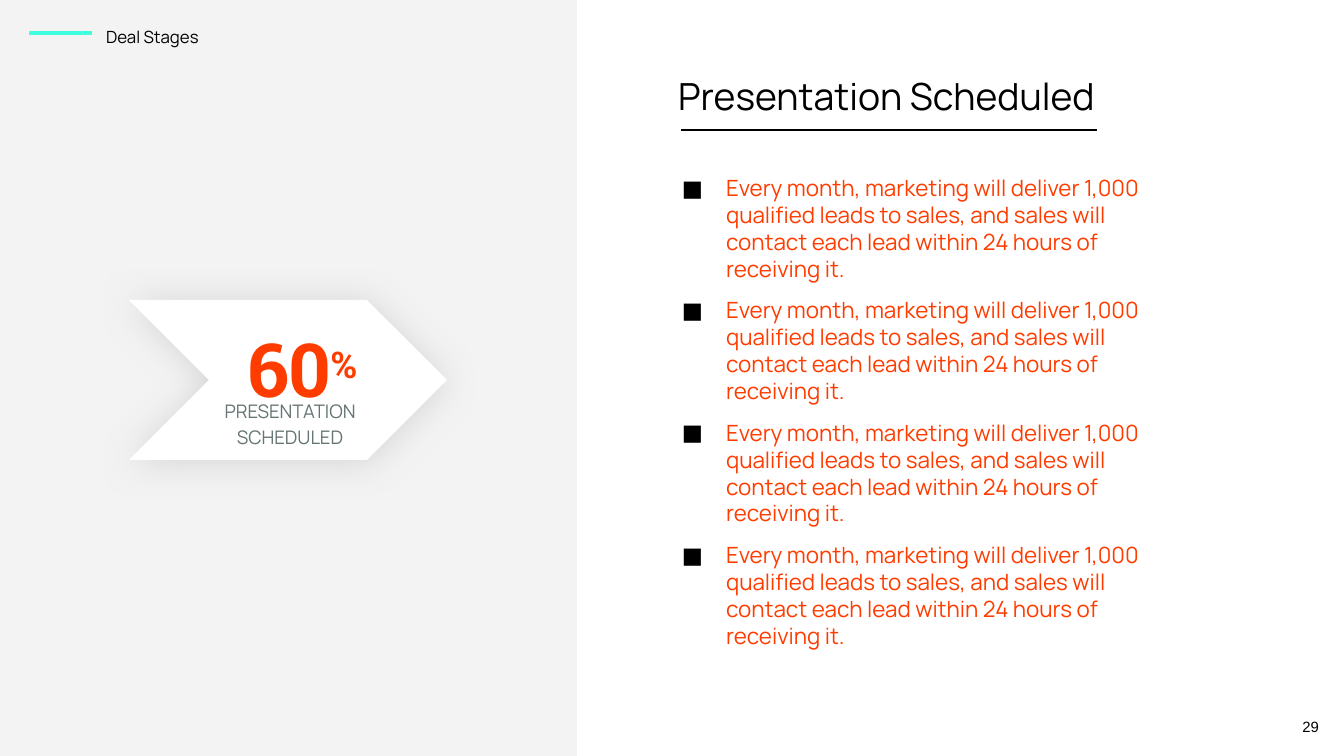
import lxml.etree
import pptx
import pptx.dml.color
import pptx.enum.shapes
import pptx.enum.text
import pptx.oxml
import pptx.oxml.ns
import pptx.util

RGB = pptx.dml.color.RGBColor
ALIGN = pptx.enum.text.PP_ALIGN
ANCHOR = pptx.enum.text.MSO_ANCHOR
SHAPE = pptx.enum.shapes.MSO_SHAPE
Pt = pptx.util.Pt
qn = pptx.oxml.ns.qn

BLACK = RGB(0x00, 0x00, 0x00)
WHITE = RGB(0xFF, 0xFF, 0xFF)
PANEL = RGB(0xF3, 0xF3, 0xF3)
MINT = RGB(0x3F, 0xFF, 0xDC)
ORANGE = RGB(0xFF, 0x3C, 0x00)
GRAY = RGB(0x65, 0x75, 0x73)
SHADOW = RGB(0xB7, 0xB7, 0xB7)

# Content
SECTION = "Deal Stages"
TITLE = "Presentation Scheduled"
POINTS = ["Every month, marketing will deliver 1,000 qualified leads to sales, "
          "and sales will contact each lead within 24 hours of receiving it."] * 4
PERCENT = ("60", "%")
STAGE = "PRESENTATION SCHEDULED"
PAGE = "29"

# Layout in px
SLIDE_W, SLIDE_H = 1344, 756
INSET = 13
INDENT, HANG = 67, 44


def px(n):
    return round(n * 9144000 / SLIDE_W)


def frame(sp, box, anchor=ANCHOR.TOP):
    sp.left, sp.top, sp.width, sp.height = map(px, box)
    tf = sp.text_frame
    tf.word_wrap = True
    tf.auto_size = pptx.enum.text.MSO_AUTO_SIZE.NONE
    tf.vertical_anchor = anchor
    tf.margin_left = tf.margin_top = tf.margin_right = tf.margin_bottom = px(INSET)
    return tf


def add_run(p, text, size, color, font="Manrope", bold=False):
    r = p.add_run()
    r.text = text
    r.font.size, r.font.name, r.font.bold = Pt(size), font, bold
    r.font.color.rgb = color
    return r


def format_paragraph(p, align=ALIGN.LEFT, spacing=1.0, before=0):
    p.alignment, p.line_spacing, p.space_before = align, spacing, Pt(before)
    return p


def add_bullet(p):
    pPr = p._p.get_or_add_pPr()
    pPr.set("marL", str(px(INDENT)))
    pPr.set("indent", str(-px(HANG)))
    color = lxml.etree.SubElement(pPr, qn("a:buClr"))
    lxml.etree.SubElement(color, qn("a:srgbClr"), val=str(BLACK))
    lxml.etree.SubElement(pPr, qn("a:buFont"), typeface="Manrope")
    lxml.etree.SubElement(pPr, qn("a:buChar"), char="■")


def add_text(s, box, text, size, color, align=ALIGN.LEFT, spacing=1.0,
             font="Manrope", bold=False, anchor=ANCHOR.TOP):
    tf = frame(s.shapes.add_textbox(0, 0, 0, 0), box, anchor)
    p = format_paragraph(tf.paragraphs[0], align, spacing)
    add_run(p, text, size, color, font, bold)
    return p


def add_shape(s, kind, box, fill):
    sp = s.shapes.add_shape(kind, *map(px, box))
    sp.shadow.inherit = False
    sp.fill.solid()
    sp.fill.fore_color.rgb = fill
    sp.line.fill.background()
    return sp


def add_rule(s, x1, x2, y, color, width):
    line = s.shapes.add_connector(pptx.enum.shapes.MSO_CONNECTOR.STRAIGHT,
                                  px(x1), px(y), px(x2), px(y))
    line.line.color.rgb = color
    line.line.width = Pt(width)
    lxml.etree.SubElement(line._element.spPr, qn("a:effectLst"))


def add_soft_shadow(sp):
    effects = sp._element.spPr.find(qn("a:effectLst"))
    outer = lxml.etree.SubElement(effects, qn("a:outerShdw"), blurRad=str(Pt(19.1)),
                                  dist=str(Pt(0.8)), dir="5400000",
                                  algn="bl", rotWithShape="0")
    color = lxml.etree.SubElement(outer, qn("a:srgbClr"), val=str(SHADOW))
    lxml.etree.SubElement(color, qn("a:alpha"), val="50000")


def main():
    prs = pptx.Presentation()
    prs.slide_width, prs.slide_height = px(SLIDE_W), px(SLIDE_H)
    s = prs.slides.add_slide(prs.slide_layouts[1])

    # Left panel with section label
    panel = add_shape(s, SHAPE.RECTANGLE, (0, 0, 577, SLIDE_H), PANEL)
    s.shapes._spTree.insert(2, panel._element)
    add_text(s, (93, 11, 542, 43), SECTION, 9, BLACK, spacing=1.15)
    add_rule(s, 29, 92, 33, MINT, 2.25)

    # Title and underline
    tf = frame(s.shapes.title, (665, 60, 460, 58))
    add_run(format_paragraph(tf.paragraphs[0]), TITLE, 20, BLACK)
    add_rule(s, 681, 1097, 130, BLACK, 0.75)

    # Bulleted list
    tf = frame(s.placeholders[1], (646, 161, 542, 425))
    for i, point in enumerate(POINTS):
        p = tf.add_paragraph() if i else tf.paragraphs[0]
        format_paragraph(p, before=8 if i else 0)
        add_bullet(p)
        add_run(p, point, 12, ORANGE)

    # Stage chevron
    chevron = add_shape(s, SHAPE.CHEVRON, (129, 300, 318, 160), WHITE)
    chevron.adjustments[0] = 0.5
    add_soft_shadow(chevron)
    add_text(s, (175, 384, 230, 58), STAGE, 10, GRAY, ALIGN.CENTER, 1.15)
    number, sign = PERCENT
    p = add_text(s, (187, 296, 230, 90), number, 40, ORANGE, ALIGN.CENTER, 1.15,
                 "Roboto Slab", True)
    r = add_run(p, sign, 34, ORANGE, "Roboto Slab", True)
    r.font._element.set("baseline", "30000")

    # Page number
    add_text(s, (1251, 698, 81, 58), PAGE, 8, BLACK, ALIGN.RIGHT,
             font="Arial", anchor=ANCHOR.MIDDLE)

    prs.save("out.pptx")


if __name__ == "__main__":
    main()
